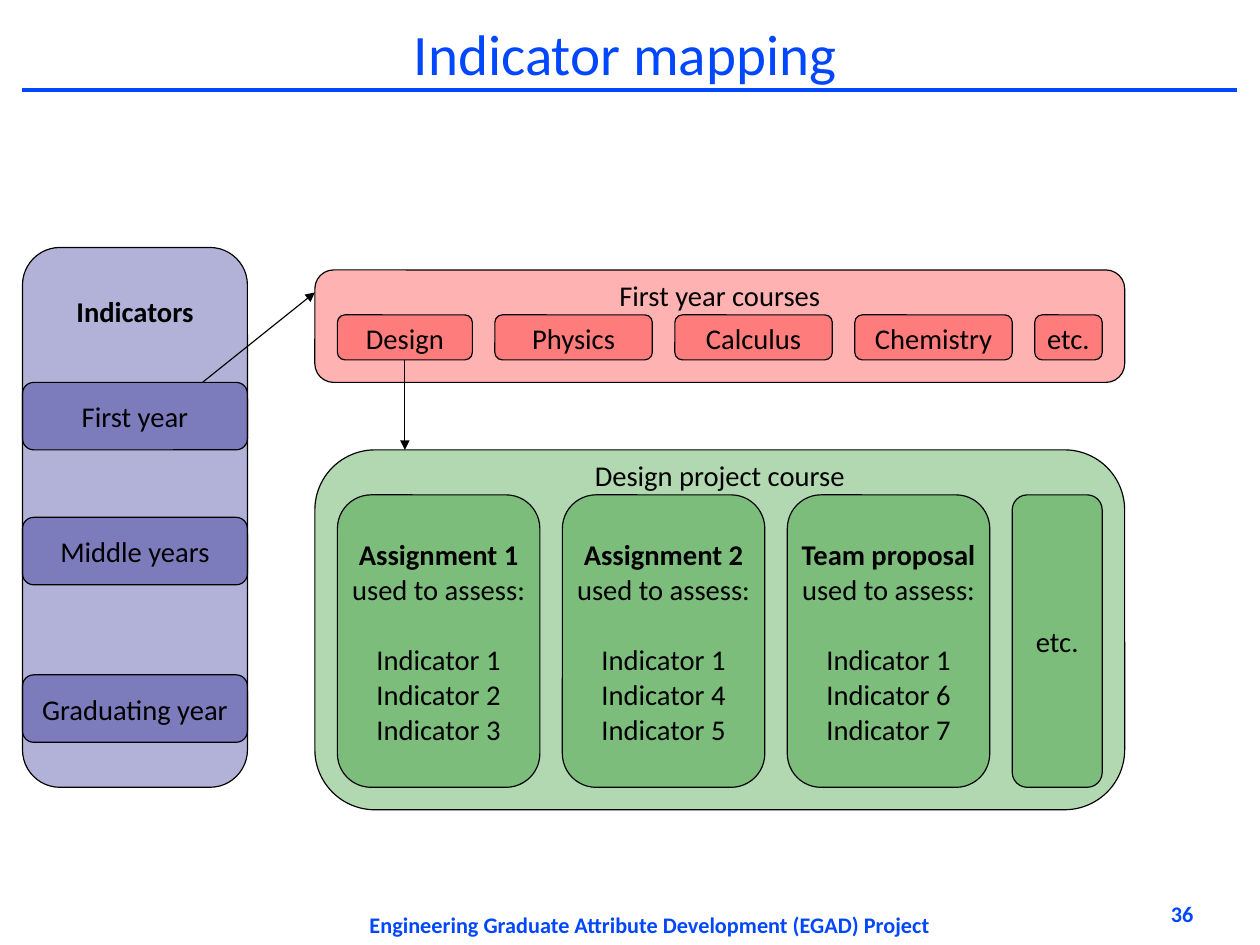
"""Build the indicator mapping slide: indicators, first year courses and one course's assignments."""
from dataclasses import dataclass

from lxml.etree import SubElement
from pptx import Presentation
from pptx.dml.color import RGBColor
from pptx.enum.shapes import MSO_CONNECTOR, MSO_SHAPE
from pptx.enum.text import MSO_ANCHOR, MSO_AUTO_SIZE, PP_ALIGN
from pptx.oxml.ns import qn
from pptx.slide import Slide
from pptx.text.text import TextFrame
from pptx.util import Length, Pt

BLUE = RGBColor(0x00, 0x47, 0xFF)
NAVY = RGBColor(0x00, 0x00, 0x80)
RED = RGBColor(0xFF, 0x00, 0x00)
GREEN = RGBColor(0x00, 0x80, 0x00)
BLACK = RGBColor(0x00, 0x00, 0x00)

FONT = "Calibri"
GRID = 14.17
GAP = 1
OPACITY = 30
LINE_SPACING = 1.02
BLANK_LINE = Pt(22)


@dataclass(frozen=True)
class Box:
    """A rounded box in grid units; heading_inset, in points, puts its text at the top."""

    left: float
    top: float
    width: float
    height: float
    text: str
    color: RGBColor
    bold_first: bool = False
    heading_inset: float | None = None
    list_start: int | None = None


@dataclass(frozen=True)
class Rule:
    """A straight line between two grid points."""

    start: tuple[float, float]
    end: tuple[float, float]
    color: RGBColor = BLACK
    weight: float = 0.75
    arrow: bool = True


@dataclass(frozen=True)
class Caption:
    """A small blue text at the foot of the slide, in points."""

    left: float
    top: float
    width: float
    height: float
    text: str
    align: PP_ALIGN


def grid(units: float) -> Length:
    """Turn grid units into a length."""
    return Pt(GRID * units)


def format_text(frame: TextFrame, size: float, color: RGBColor, align: PP_ALIGN, bold: bool = False) -> None:
    """Give every run in the frame one look."""
    for paragraph in frame.paragraphs:
        paragraph.alignment = align
        for run in paragraph.runs:
            run.font.name = FONT
            run.font.size = Pt(size)
            run.font.bold = bold
            run.font.color.rgb = color


def clear_margins(frame: TextFrame) -> None:
    """Remove the inner margins of a frame."""
    frame.margin_left = frame.margin_right = frame.margin_top = frame.margin_bottom = 0


def add_title(slide: Slide, text: str) -> None:
    """Place and format the title placeholder."""
    title = slide.shapes.title
    title.left, title.top, title.width, title.height = Pt(36.7), Pt(10.8), Pt(714.3), Pt(44)
    frame = title.text_frame
    frame.text = text
    frame.auto_size = MSO_AUTO_SIZE.NONE
    frame.vertical_anchor = MSO_ANCHOR.MIDDLE
    clear_margins(frame)
    format_text(frame, 36, BLUE, PP_ALIGN.CENTER)
    frame.paragraphs[0].line_spacing = LINE_SPACING


def add_caption(slide: Slide, caption: Caption) -> None:
    """Draw a caption at the foot of the slide."""
    frame = slide.shapes.add_textbox(
        Pt(caption.left), Pt(caption.top), Pt(caption.width), Pt(caption.height)
    ).text_frame
    frame.text = caption.text
    frame.word_wrap = True
    clear_margins(frame)
    format_text(frame, 14, BLUE, caption.align, bold=True)


def add_box(slide: Slide, box: Box) -> None:
    """Draw a translucent rounded box with centred text."""
    shape = slide.shapes.add_shape(
        MSO_SHAPE.ROUNDED_RECTANGLE, grid(box.left), grid(box.top), grid(box.width), grid(box.height)
    )
    shape.shadow.inherit = False
    shape.fill.solid()
    shape.fill.fore_color.rgb = box.color
    fill_color = shape.element.spPr.find(f"{qn('a:solidFill')}/{qn('a:srgbClr')}")
    SubElement(fill_color, qn("a:alpha")).set("val", str(OPACITY * 1000))
    shape.line.color.rgb = BLACK
    shape.line.width = Pt(0.75)

    frame = shape.text_frame
    frame.text = box.text
    frame.word_wrap = False
    frame.vertical_anchor = MSO_ANCHOR.MIDDLE
    if box.heading_inset is not None:
        frame.vertical_anchor = MSO_ANCHOR.TOP
        frame.margin_top = Pt(box.heading_inset)
    format_text(frame, 18, BLACK, PP_ALIGN.CENTER)
    for paragraph in frame.paragraphs:
        paragraph.line_spacing = LINE_SPACING
    if box.bold_first:
        frame.paragraphs[0].runs[0].font.bold = True
    if box.list_start is not None:
        frame.paragraphs[box.list_start].space_before = BLANK_LINE


def add_rule(slide: Slide, rule: Rule) -> None:
    """Draw a line, with an arrowhead at its end if wanted."""
    connector = slide.shapes.add_connector(
        MSO_CONNECTOR.STRAIGHT, *(grid(units) for units in rule.start + rule.end)
    )
    connector.line.color.rgb = rule.color
    connector.line.width = Pt(rule.weight)
    properties = connector.element.spPr
    if rule.arrow:
        SubElement(properties.find(qn("a:ln")), qn("a:tailEnd")).set("type", "triangle")
    SubElement(properties, qn("a:effectLst"))


def row(left: float, top: float, height: float, color: RGBColor, cells: list[tuple[str, float]]) -> list[Box]:
    """Lay out boxes from left to right with equal gaps; longer texts hold a heading and a list."""
    boxes = []
    for text, width in cells:
        detailed = "\n" in text
        boxes.append(Box(left, top, width, height, text, color, detailed, list_start=2 if detailed else None))
        left += width + GAP
    return boxes


def assignment(name: str, *indicators: int) -> str:
    """Write the text of an assessed piece of work."""
    return "\n".join([name, "used to assess:", *(f"Indicator {number}" for number in indicators)])


def main() -> None:
    """Build and save the slide."""
    presentation = Presentation()
    presentation.slide_width, presentation.slide_height = Pt(793.7), Pt(595.28)
    slide = presentation.slides.add_slide(presentation.slide_layouts[5])

    stages = [("First year", 17), ("Middle years", 23), ("Graduating year", 30)]
    courses = [("Design", 6), ("Physics", 7), ("Calculus", 7), ("Chemistry", 7), ("etc.", 3)]
    assessments = [
        (assignment("Assignment 1", 1, 2, 3), 9),
        (assignment("Assignment 2", 1, 4, 5), 9),
        (assignment("Team proposal", 1, 6, 7), 9),
        ("etc.", 4),
    ]
    boxes = [
        Box(1, 11, 10, 24, "Indicators", NAVY, bold_first=True, heading_inset=22),
        *(Box(1, top, 10, 3, stage, NAVY) for stage, top in stages),
        Box(14, 12, 36, 5, "First year courses", RED, heading_inset=1),
        *row(15, 14, 2, RED, courses),
        Box(14, 20, 36, 16, "Design project course", GREEN, heading_inset=-6.5),
        *row(15, 22, 13, GREEN, assessments),
    ]
    rules = [
        Rule((1, 4), (55, 4), BLUE, 2.83, arrow=False),
        Rule((9, 17), (14, 13)),
        Rule((18, 16), (18, 20)),
    ]
    captions = [
        Caption(221, 573.8, 376.6, 21.4, "Engineering Graduate Attribute Development (EGAD) Project", PP_ALIGN.CENTER),
        Caption(601.2, 566.9, 150.5, 28, "36", PP_ALIGN.RIGHT),
    ]

    add_title(slide, "Indicator mapping")
    for box in boxes:
        add_box(slide, box)
    for rule in rules:
        add_rule(slide, rule)
    for caption in captions:
        add_caption(slide, caption)
    presentation.save("out.pptx")


if __name__ == "__main__":
    main()
